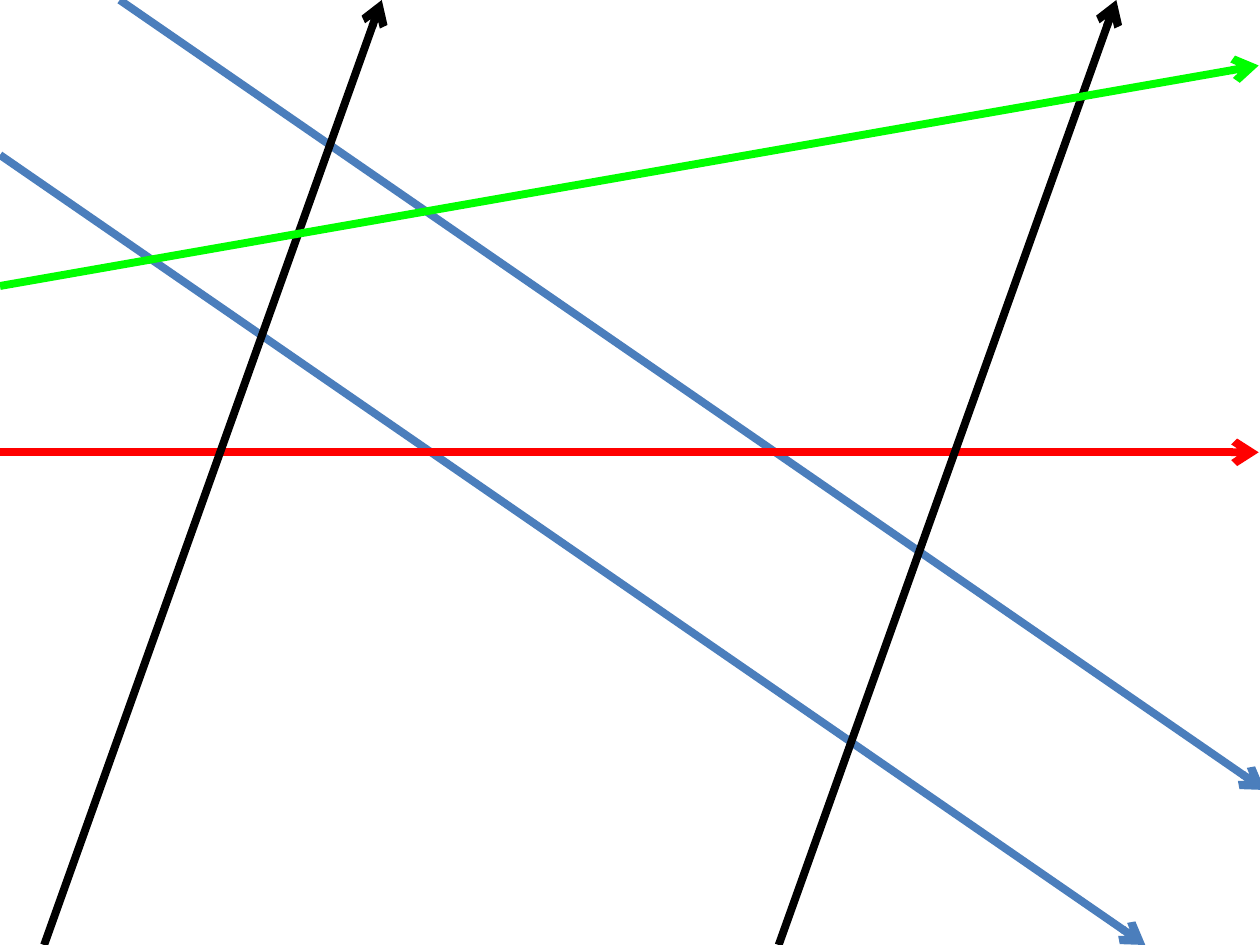
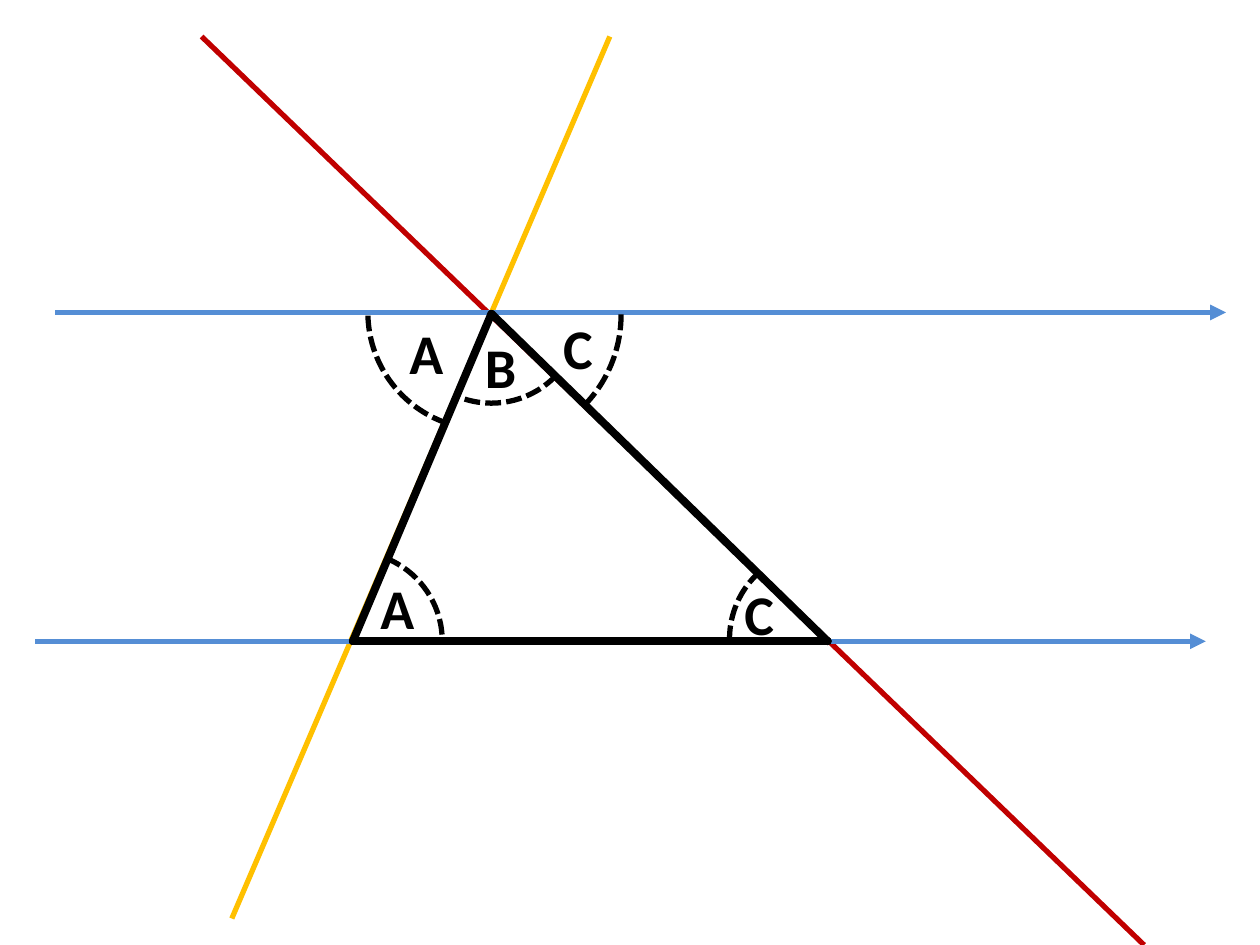
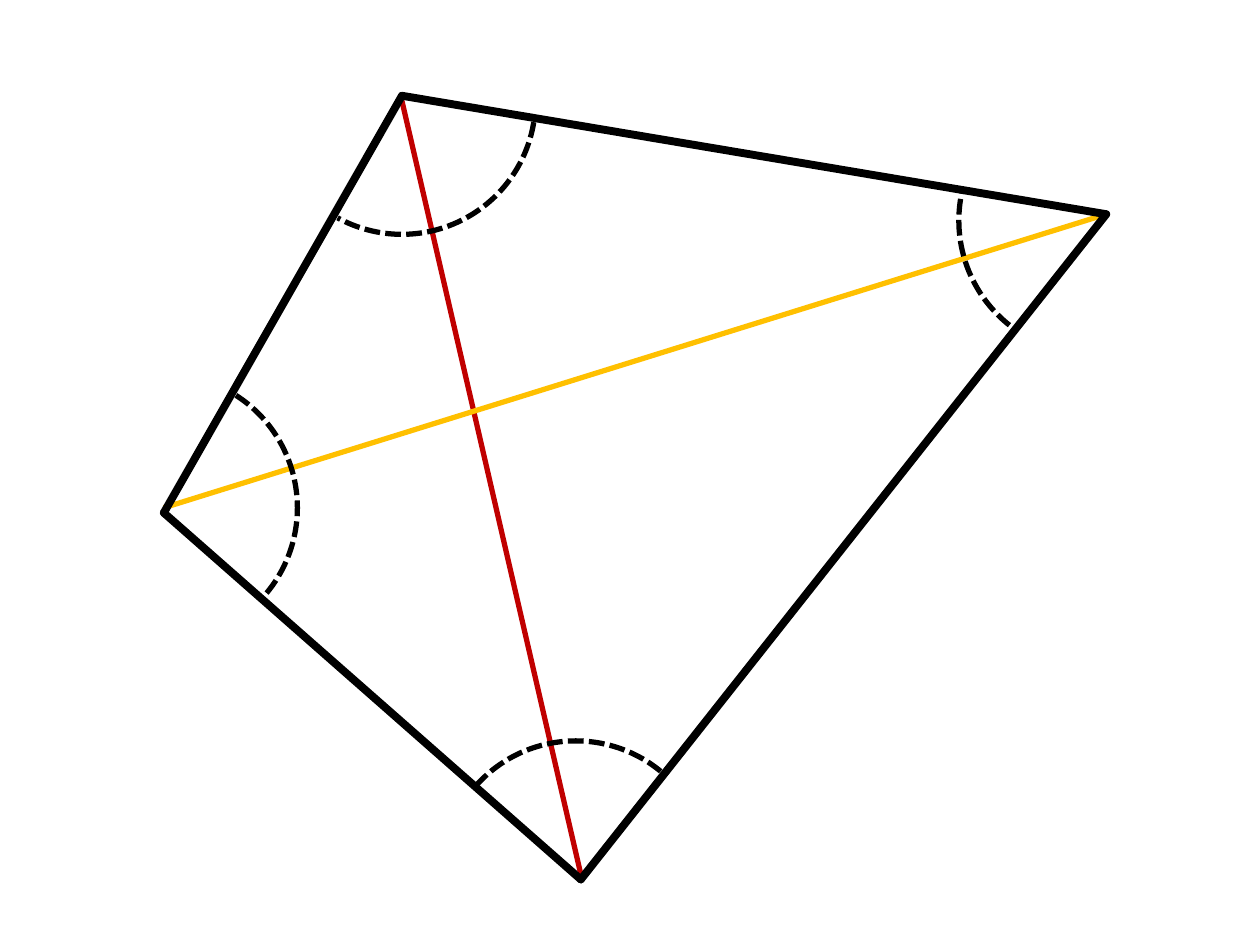
from itertools import pairwise

from lxml import etree
from pptx import Presentation
from pptx.dml.color import RGBColor
from pptx.enum import dml, shapes, text
from pptx.oxml import ns
from pptx.util import Inches, Pt

COLORS = {
    "black": "000000",
    "steel": "4B7EBC",
    "sky": "558ED5",
    "red": "FF0000",
    "green": "00FF00",
    "crimson": "C00000",
    "gold": "FFC000",
}
FONT = "Calibri"
THICK, THIN = 4.5, 3
WIDTH, HEIGHT = 10, 7.5


class Drawing:
    def __init__(self):
        self.prs = Presentation()
        self.prs.slide_width, self.prs.slide_height = Inches(WIDTH), Inches(HEIGHT)

    def new_slide(self):
        self.slide = self.prs.slides.add_slide(self.prs.slide_layouts[6])
        self.shapes = self.slide.shapes

    def open_group(self):
        self.shapes = self.slide.shapes.add_group_shape().shapes

    def close_group(self):
        self.shapes = self.slide.shapes

    def style_line(self, sp, color, width):
        sp.line.color.rgb = RGBColor.from_string(COLORS[color])
        sp.line.width = Pt(width)

    def line(self, start, end, color, width=THIN, head=None, cap=None):
        """Draw a straight line; head is the arrowhead type at its end."""
        points = [Inches(v) for v in (*start, *end)]
        sp = self.shapes.add_connector(shapes.MSO_CONNECTOR.STRAIGHT, *points)
        self.style_line(sp, color, width)
        ln = sp.line._get_or_add_ln()
        if cap:
            ln.set("cap", cap)
        if head:
            etree.SubElement(ln, ns.qn("a:tailEnd"), type=head)
        etree.SubElement(sp._element.spPr, ns.qn("a:effectLst"))

    def outline(self, *points):
        for start, end in pairwise(points):
            self.line(start, end, "black", THICK, cap="rnd")

    def angle(self, center, radius, start, end):
        """Mark an angle with a dashed arc, in degrees clockwise from the right."""
        x, y = center
        sp = self.shapes.add_shape(shapes.MSO_SHAPE.ARC, Inches(x - radius), Inches(y - radius),
                                   Inches(2 * radius), Inches(2 * radius))
        sp.shadow.inherit = False
        sp.fill.background()
        self.style_line(sp, "black", THIN)
        sp.line.dash_style = dml.MSO_LINE.SQUARE_DOT
        # Adjustments count 100000ths, while angles are stored in 60000ths of a degree.
        sp.adjustments[0], sp.adjustments[1] = start * 0.6, end * 0.6
        prst_dash = sp.line._get_or_add_ln().find(ns.qn("a:prstDash"))
        prst_dash.set("val", "sysDash")

    def label(self, letter, left, top):
        sp = self.shapes.add_textbox(Inches(left), Inches(top), Inches(0.39), Inches(0.64))
        tf = sp.text_frame
        tf.word_wrap = True
        tf.auto_size = text.MSO_AUTO_SIZE.SHAPE_TO_FIT_TEXT
        r = tf.paragraphs[0].add_run()
        r.text = letter
        r.font.name, r.font.size, r.font.bold = FONT, Pt(32), True
        r.font.color.rgb = RGBColor.from_string(COLORS["black"])


def draw_crossing_lines(d):
    d.new_slide()
    for dx, dy in ((0, 0), (0.95, -1.23)):
        d.line((dx, 1.23 + dy), (9.09 + dx, HEIGHT + dy), "steel", THICK, "arrow")
    d.line((0, 3.59), (9.99, 3.59), "red", THICK, "arrow")
    for x in (6.18, 0.35):
        d.line((x, HEIGHT), (x + 2.68, 0), "black", THICK, "arrow")
    d.line((0, 2.27), (9.99, 0.52), "green", THICK, "arrow")


def draw_triangle_angles(d):
    left, right, apex = (2.8, 5.09), (6.57, 5.09), (3.9, 2.49)
    d.new_slide()
    d.line((4.84, 0.29), (1.84, 7.29), "gold")
    d.line((1.6, 0.29), (9.08, 7.5), "crimson")
    for x, y in ((0.44, 2.48), (0.28, 5.09)):
        d.line((x, y), (x + 9.29, y), "sky", head="triangle")

    d.open_group()
    d.outline(left, right, apex, left)
    d.angle(left, 0.71, 291.7, 0)
    d.angle((6.5, 5.07), 0.71, 178.4, 229)
    d.angle(apex, 0.71, 43.4, 111.2)
    d.close_group()
    for letter, x, y in (("A", 2.92, 4.5), ("C", 5.81, 4.55), ("B", 3.75, 2.59)):
        d.label(letter, x, y)

    outer_angles = (
        ((3.9, 2.5), 1.03, 359.8, 43.6, "C", 4.37, 2.44),
        ((3.85, 2.48), 0.93, 109, 180.2, "A", 3.15, 2.48),
    )
    for center, radius, start, end, letter, x, y in outer_angles:
        d.open_group()
        d.angle(center, radius, start, end)
        d.label(letter, x, y)
        d.close_group()


def draw_quadrilateral(d):
    top, right, bottom, left = (3.19, 0.76), (8.78, 1.7), (4.61, 6.98), (1.3, 4.07)
    d.new_slide()
    d.line((3.19, 0.8), (4.61, 6.94), "crimson")
    d.line(right, (1.3, 4.03), "gold")
    d.outline(left, top, right, bottom, left)
    corner_angles = (
        ((8.67, 1.75), 128.4, 191.8),
        ((1.3, 4.03), 302.7, 42.8),
        ((3.19, 0.8), 9.2, 118.8),
        ((4.57, 6.94), 221.5, 311.9),
    )
    for center, start, end in corner_angles:
        d.angle(center, 1.06, start, end)


def main():
    d = Drawing()
    draw_crossing_lines(d)
    draw_triangle_angles(d)
    draw_quadrilateral(d)
    d.prs.save("out.pptx")


if __name__ == "__main__":
    main()
